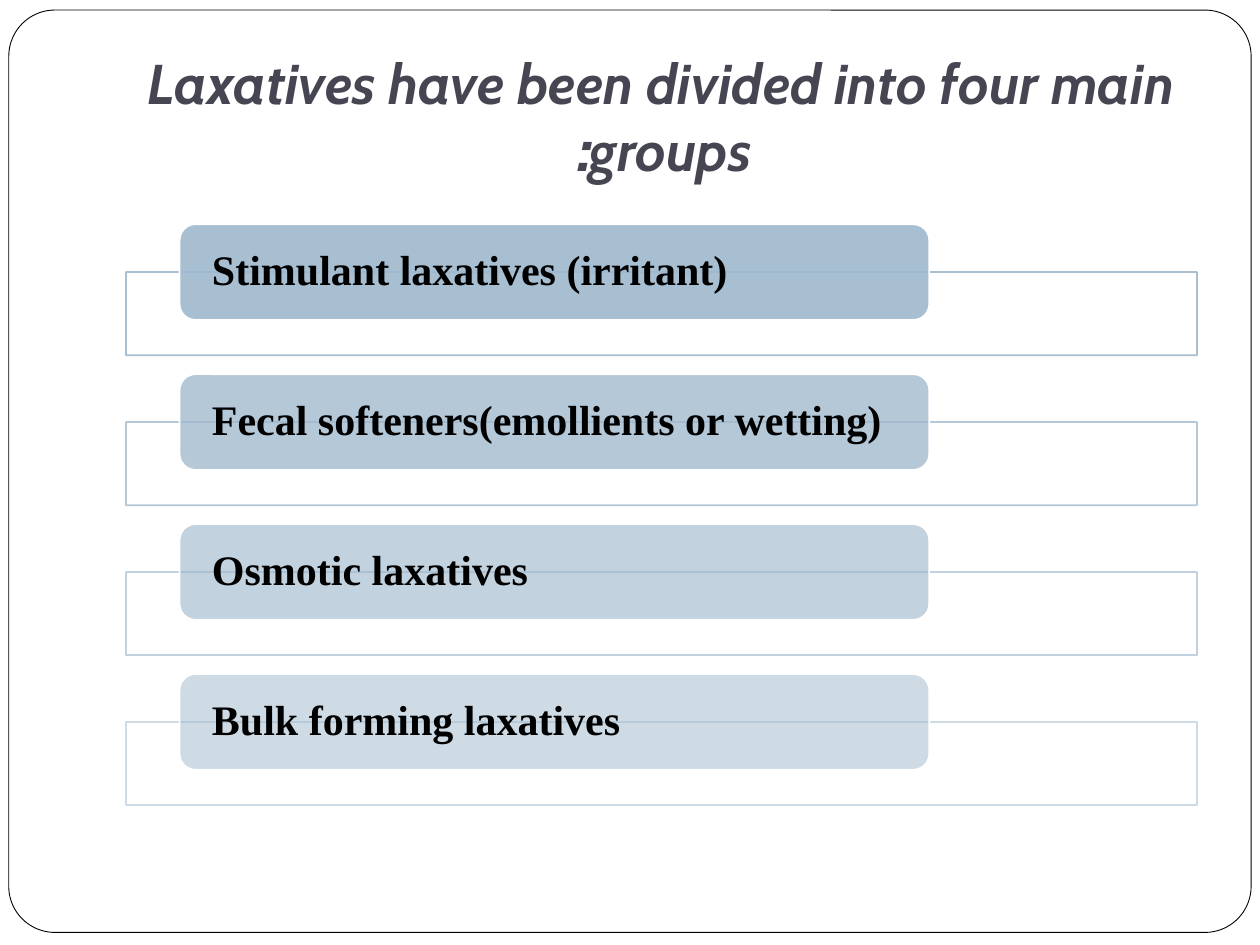
from lxml.etree import SubElement
from pptx import Presentation
from pptx.dml.color import RGBColor
from pptx.enum.shapes import MSO_SHAPE as Shape
from pptx.enum.text import MSO_ANCHOR as Anchor, PP_ALIGN as Align
from pptx.oxml.ns import qn
from pptx.util import Inches, Pt

WHITE = RGBColor(0xFF, 0xFF, 0xFF)
BLACK = RGBColor(0x00, 0x00, 0x00)
SLATE = RGBColor(0x46, 0x46, 0x53)
BLUE = RGBColor(0x9F, 0xB8, 0xCD)

GROUPS = [
    ("Stimulant laxatives (irritant)", 90),
    ("Fecal softeners(emollients or wetting)", 77),
    ("Osmotic laxatives", 63),
    ("Bulk forming laxatives", 50),
]
LEFT, WIDTH = 1, 8.5
FIRST_ROW, ROW_STEP = 1.78, 1.19
FRAME_DROP = 0.38  # frame top below label top

prs = Presentation()
prs.slide_width, prs.slide_height = Inches(10), Inches(7.5)
slide = prs.slides.add_slide(prs.slide_layouts[6])


def add_box(preset, box, fill, line, line_width, fill_opacity=100, line_opacity=100):
    """Add a filled, outlined shape; opacities are percentages."""
    shape = slide.shapes.add_shape(preset, *map(Inches, box))
    shape.shadow.inherit = False
    shape.fill.solid()
    shape.fill.fore_color.rgb = fill
    shape.line.color.rgb = line
    shape.line.width = Pt(line_width)
    colors = list(shape._element.spPr.iter(qn("a:srgbClr")))
    for color, opacity in zip(colors, (fill_opacity, line_opacity)):
        if opacity < 100:
            SubElement(color, qn("a:alpha"), val=str(opacity * 1000))
    return shape


def write(frame, text, font_name, size, color, align, anchor, margins):
    frame.word_wrap = True
    frame.vertical_anchor = anchor
    (frame.margin_left, frame.margin_top,
     frame.margin_right, frame.margin_bottom) = map(Inches, margins)
    paragraph = frame.paragraphs[0]
    paragraph.alignment = align
    run = paragraph.add_run()
    run.text = text
    run.font.name, run.font.size, run.font.bold = font_name, Pt(size), True
    run.font.color.rgb = color
    return paragraph


border = add_box(Shape.ROUNDED_RECTANGLE, (0.07, 0.08, 9.86, 7.32), WHITE, BLACK, 0.5)
border.adjustments[0] = 0.05

title = slide.shapes.add_textbox(*map(Inches, (LEFT, 0.3, WIDTH, 1.25)))
heading = write(title.text_frame, "Laxatives have been divided into four main groups:",
                "Cabin", 32, SLATE, Align.CENTER, Anchor.BOTTOM, (0.1, 0.05, 0.1, 0.1))
heading.runs[0].font.italic = True
heading._p.get_or_add_pPr().set("rtl", "1")

for row, (group, opacity) in enumerate(GROUPS):
    top = FIRST_ROW + row * ROW_STEP
    add_box(Shape.RECTANGLE, (LEFT, top + FRAME_DROP, WIDTH, 0.66), WHITE, BLUE, 1,
            90, opacity)
    label = add_box(Shape.ROUNDED_RECTANGLE, (LEFT + 0.05 * WIDTH, top, 0.7 * WIDTH, 0.76),
                    BLUE, WHITE, 1, opacity)
    entry = write(label.text_frame, group, "Times New Roman", 24, BLACK,
                  Align.LEFT, Anchor.MIDDLE, (0.22, 0, 0.22, 0))
    entry.line_spacing = 0.9

prs.save("out.pptx")
